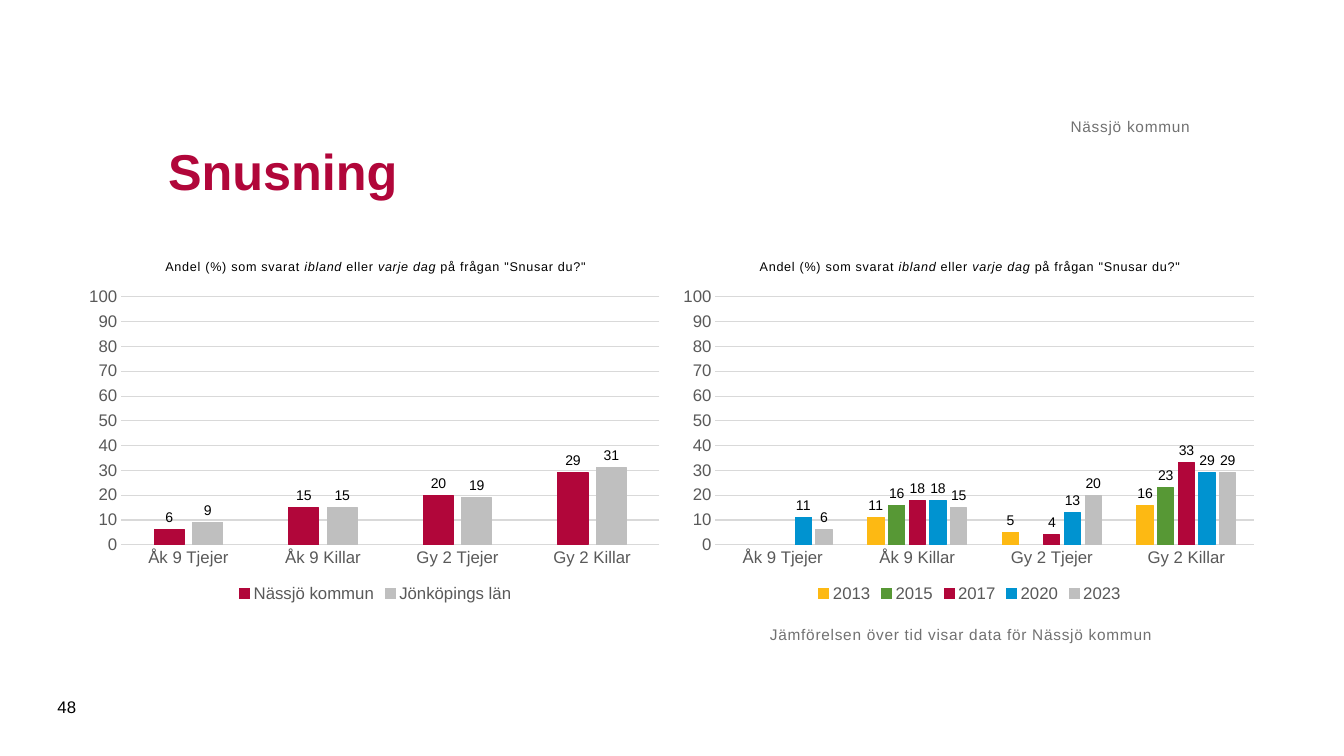
from lxml import etree
from pptx import Presentation
from pptx import util as u
from pptx.chart.data import CategoryChartData
from pptx.dml.color import RGBColor
from pptx.enum import chart as ch, text as tx
from pptx.oxml.ns import qn

CRIMSON = RGBColor(0xB1, 0x06, 0x3A)
SILVER = RGBColor(0xBF, 0xBF, 0xBF)
AMBER = RGBColor(0xFD, 0xB9, 0x13)
GREEN = RGBColor(0x57, 0x98, 0x35)
BLUE = RGBColor(0x00, 0x93, 0xD0)
GRID = RGBColor(0xD9, 0xD9, 0xD9)
AXIS = RGBColor(0x59, 0x59, 0x59)
NOTE = RGBColor(0x71, 0x71, 0x71)
BLACK = RGBColor(0, 0, 0)
WHITE = RGBColor(0xFF, 0xFF, 0xFF)
FONT = "Arial"
NUMBER = "#,##0;#,##0"
GROUPS = ["Åk 9 Tjejer", "Åk 9 Killar", "Gy 2 Tjejer", "Gy 2 Killar"]
QUESTION = [("Andel (%) som\u00a0svarat ", False), ("ibland", True), (" eller ", False),
            ("varje dag", True), (" på frågan \"Snusar du?\"", False)]
REGIONS = [("Nässjö kommun", CRIMSON, [6, 15, 20, 29]),
           ("Jönköpings län", SILVER, [9, 15, 19, 31])]
YEARS = [("2013", AMBER, [None, 11, 5, 16]),
         ("2015", GREEN, [None, 16, None, 23]),
         ("2017", CRIMSON, [None, 18, 4, 33]),
         ("2020", BLUE, [11, 18, 13, 29]),
         ("2023", SILVER, [6, 15, 20, 29])]


def style(font, size, color, bold=False, italic=False):
    """Set face, size, colour and weight of a font."""
    font.name, font.size = FONT, u.Pt(size)
    font.bold, font.italic = bold, italic
    font.color.rgb = color


def add_run(paragraph, words, size, color, spacing=0, **look):
    """Add one styled run with its letter spacing in points."""
    run = paragraph.add_run()
    run.text = words
    style(run.font, size, color, **look)
    if spacing:
        run._r.get_or_add_rPr().set("spc", str(round(spacing * 100)))


def add_label(slide, box, words, size, color, spacing=0, inset=True,
              anchor=tx.MSO_ANCHOR.MIDDLE, align=tx.PP_ALIGN.LEFT, bold=False):
    """Place one line of text in a box."""
    frame = slide.shapes.add_textbox(*map(u.Pt, box)).text_frame
    frame.word_wrap, frame.vertical_anchor = True, anchor
    if not inset:
        frame.margin_left = frame.margin_right = 0
        frame.margin_top = frame.margin_bottom = 0
    line = frame.paragraphs[0]
    line.alignment = align
    add_run(line, words, size, color, spacing, bold=bold)


def fix_plot_area(chart, **fractions):
    """Pin the inner plot area to fractions of the chart box."""
    plot_area = chart._chartSpace.chart.plotArea
    for old in plot_area.findall(qn("c:layout")):
        plot_area.remove(old)
    layout = etree.Element(qn("c:layout"))
    plot_area.insert(0, layout)
    manual = etree.SubElement(layout, qn("c:manualLayout"))
    settings = {"layoutTarget": "inner", "xMode": "edge", "yMode": "edge", **fractions}
    for tag, value in settings.items():
        etree.SubElement(manual, qn(f"c:{tag}")).set("val", str(value))


def style_axes(chart):
    """Format the group axis and the percentage axis."""
    groups, percent = chart.category_axis, chart.value_axis
    for axis in (groups, percent):
        axis.major_tick_mark = axis.minor_tick_mark = ch.XL_TICK_MARK.NONE
        style(axis.tick_labels.font, 12, AXIS)
    groups.format.line.color.rgb = GRID
    groups.format.line.width = u.Pt(0.75)
    percent.format.line.fill.background()
    percent.minimum_scale, percent.maximum_scale, percent.major_unit = 0, 100, 10
    percent.tick_labels.number_format = NUMBER
    percent.tick_labels.number_format_is_linked = False
    percent.major_gridlines.format.line.color.rgb = GRID
    percent.major_gridlines.format.line.width = u.Pt(0.75)


def add_share_chart(slide, box, rows):
    """Place a column chart of snus use, one series per row."""
    data = CategoryChartData(number_format=NUMBER)
    data.categories = GROUPS
    for name, _, shares in rows:
        data.add_series(name, shares)
    chart = slide.shapes.add_chart(ch.XL_CHART_TYPE.COLUMN_CLUSTERED,
                                   *map(u.Pt, box), data).chart
    style(chart.font, 10, BLACK)

    chart.has_title = True
    heading = chart.chart_title.text_frame.paragraphs[0]
    for words, italic in QUESTION:
        add_run(heading, words, 9, BLACK, 0.5, italic=italic)
    chart.chart_title.include_in_layout = False

    chart.has_legend = True
    chart.legend.position = ch.XL_LEGEND_POSITION.BOTTOM
    chart.legend.include_in_layout = False
    style(chart.legend.font, 12, AXIS)
    style_axes(chart)

    plot = chart.plots[0]
    plot.gap_width, plot.overlap, plot.vary_by_categories = 219, -27, False
    for series, (_, color, _) in zip(plot.series, rows):
        series.format.fill.solid()
        series.format.fill.fore_color.rgb = color
        series.format.line.color.rgb = color
        series.format.line.width = u.Pt(0.75)
        labels = series.data_labels
        labels.show_value = True
        labels.position = ch.XL_LABEL_POSITION.OUTSIDE_END
        labels.number_format, labels.number_format_is_linked = NUMBER, False
        style(labels.font, 10, BLACK)
    fix_plot_area(chart, x=0.07, y=0.15, w=0.91, h=0.68)


def add_charts(slide, box, gap):
    """Place the regional and yearly charts side by side."""
    left, top, width, height = box
    chart_width = (width - gap) / 2
    for index, rows in enumerate((REGIONS, YEARS)):
        add_share_chart(slide, (left + index * (chart_width + gap), top,
                                chart_width, height), rows)


def add_header(slide, box):
    """Place the municipality line and the slide title."""
    left, top, width, _ = box
    add_label(slide, (left, top + 26, width, 102), "Snusning", 36, CRIMSON, bold=True)
    add_label(slide, (left, top, width, 52.5), "Nässjö kommun", 11, NOTE, 0.5, False,
              tx.MSO_ANCHOR.BOTTOM, tx.PP_ALIGN.RIGHT)


def add_footer(slide, box):
    """Place the note on the comparison and the page number."""
    left, top, width, height = box
    note_width = 382
    add_label(slide, (left + width - note_width, top, note_width, height),
              "Jämförelsen över tid visar data för Nässjö kommun", 11, NOTE, 0.5, False,
              tx.MSO_ANCHOR.TOP)
    add_label(slide, (left, top + 44, 41, 29), "48", 12, BLACK)


def main():
    """Build and save the slide."""
    deck = Presentation()
    deck.slide_width, deck.slide_height = u.Pt(960), u.Pt(540)
    slide = deck.slides.add_slide(deck.slide_layouts[6])
    slide.background.fill.solid()
    slide.background.fill.fore_color.rgb = WHITE
    add_charts(slide, (57, 173, 847, 260.5), 2)
    add_header(slide, (113, 44.5, 737, 128))
    add_footer(slide, (34, 446.5, 898, 67.5))
    deck.save("out.pptx")


if __name__ == "__main__":
    main()
